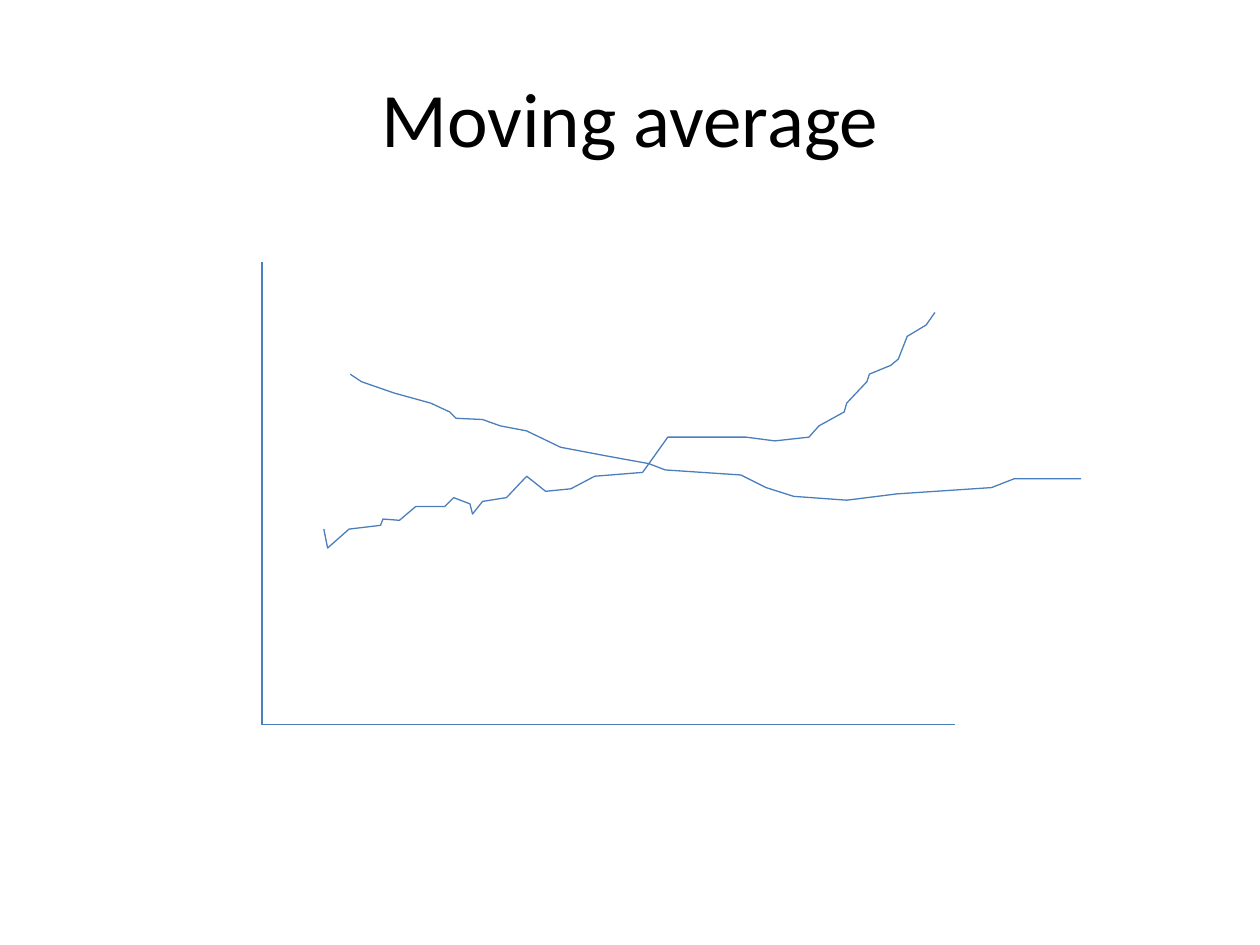
from lxml import etree
from pptx import Presentation, util as u
from pptx.dml.color import RGBColor
from pptx.enum import shapes, text
from pptx.oxml.ns import qn

BLUE = "4B7EBC"
LEFT, BASE = 2.08, 5.75

RISE = [
    (2.57, 4.2), (2.6, 4.35), (2.77, 4.2), (3.02, 4.17), (3.04, 4.12),
    (3.17, 4.13), (3.3, 4.02), (3.53, 4.02), (3.6, 3.95), (3.73, 4),
    (3.75, 4.08), (3.83, 3.98), (4.02, 3.95), (4.18, 3.78), (4.33, 3.9),
    (4.53, 3.88), (4.72, 3.78), (5.1, 3.75), (5.3, 3.47), (5.92, 3.47),
    (6.15, 3.5), (6.42, 3.47), (6.5, 3.38), (6.7, 3.27), (6.72, 3.2),
    (6.88, 3.03), (6.9, 2.97), (7.07, 2.9), (7.13, 2.85), (7.2, 2.67),
    (7.35, 2.58), (7.42, 2.48),
]
FALL = [
    (2.78, 2.97), (2.87, 3.03), (3.13, 3.12), (3.42, 3.2), (3.57, 3.27),
    (3.62, 3.32), (3.83, 3.33), (3.97, 3.38), (4.18, 3.42), (4.45, 3.55),
    (4.82, 3.62), (5.15, 3.68), (5.28, 3.73), (5.88, 3.77), (6.08, 3.87),
    (6.3, 3.94), (6.72, 3.97), (7.12, 3.92), (7.87, 3.87), (8.05, 3.8),
    (8.58, 3.8),
]


def color(code):
    return RGBColor.from_string(code)


deck = Presentation()
deck.slide_width, deck.slide_height = u.Inches(10), u.Inches(7.5)
slide = deck.slides.add_slide(deck.slide_layouts[6])

title = slide.shapes.add_textbox(
    u.Inches(0.5), u.Inches(0.3), u.Inches(9), u.Inches(1.25))
frame = title.text_frame
frame.word_wrap = True
frame.vertical_anchor = text.MSO_ANCHOR.MIDDLE
para = frame.paragraphs[0]
para.text = "Moving average"
para.alignment = text.PP_ALIGN.CENTER
para.font.name, para.font.size = "Calibri", u.Pt(44)
para.font.color.rgb = color("000000")

for x, y in [(7.58, BASE), (LEFT, 2.08)]:
    axis = slide.shapes.add_connector(
        shapes.MSO_CONNECTOR.STRAIGHT,
        u.Inches(LEFT), u.Inches(BASE), u.Inches(x), u.Inches(y))
    axis.line.color.rgb = color(BLUE)
    axis.line.width = u.Pt(0.75)
    etree.SubElement(axis.element.spPr, qn("a:effectLst"))

for trend in (RISE, FALL):
    start, *rest = [(u.Inches(x), u.Inches(y)) for x, y in trend]
    pen = slide.shapes.build_freeform(*start)
    pen.add_line_segments(rest, close=False)
    curve = pen.convert_to_shape()
    curve.shadow.inherit = False
    curve.fill.background()
    curve.line.color.rgb = color(BLUE)
    curve.line.width = u.Pt(0.75)

deck.save("out.pptx")
